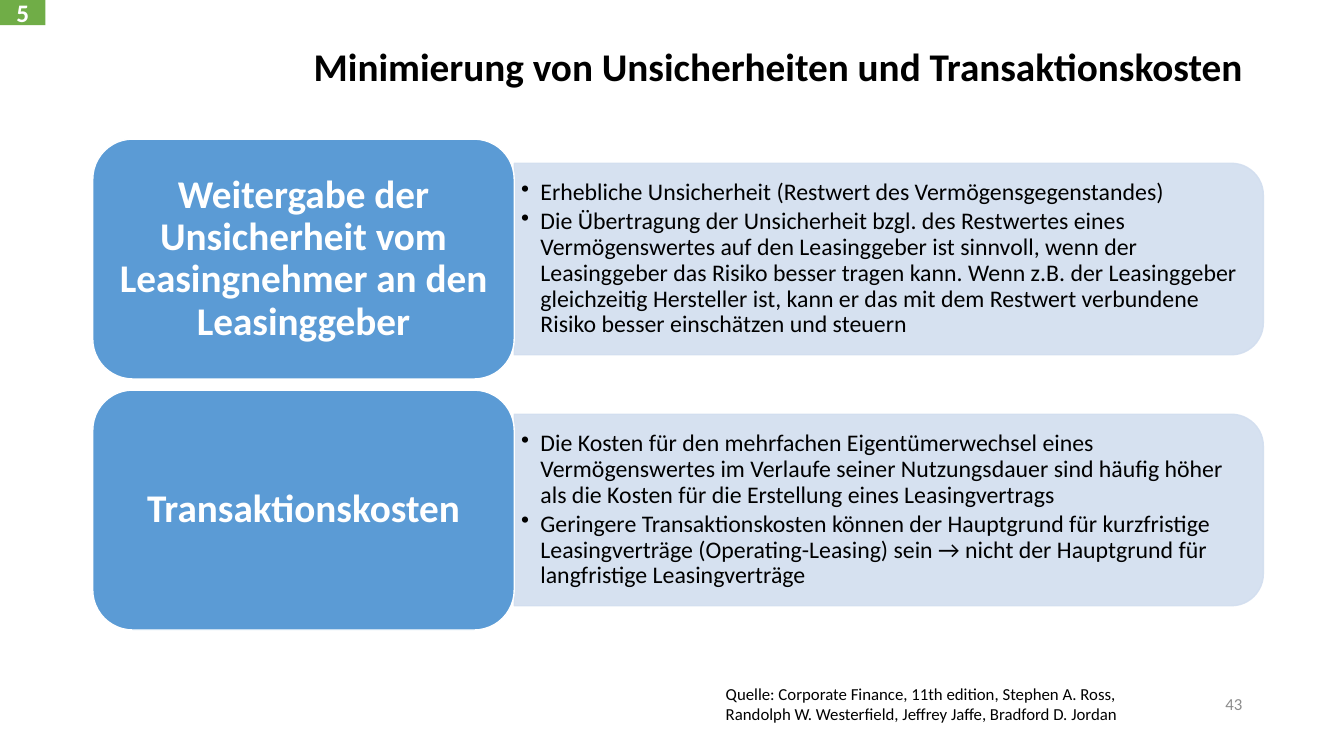
from lxml import etree
from pptx import Presentation
from pptx import util as u
from pptx.dml.color import RGBColor
from pptx.enum import shapes, text
from pptx.oxml import ns

TITLE = "Minimierung von Unsicherheiten und Transaktionskosten"
CHAPTER = "5"
PAGE = "43"
SOURCE = ("Quelle: Corporate Finance, 11th edition, Stephen A. Ross, "
          "Randolph W. Westerfield, Jeffrey Jaffe, Bradford D. Jordan")
TOPICS = [
    ("Weitergabe der Unsicherheit vom Leasingnehmer an den Leasinggeber", [
        "Erhebliche Unsicherheit (Restwert des Vermögensgegenstandes)",
        "Die Übertragung der Unsicherheit bzgl. des Restwertes eines "
        "Vermögenswertes auf den Leasinggeber ist sinnvoll, wenn der "
        "Leasinggeber das Risiko besser tragen kann. Wenn z.B. der "
        "Leasinggeber gleichzeitig Hersteller ist, kann er das mit dem "
        "Restwert verbundene Risiko besser einschätzen und steuern",
    ]),
    ("Transaktionskosten", [
        "Die Kosten für den mehrfachen Eigentümerwechsel eines "
        "Vermögenswertes im Verlaufe seiner Nutzungsdauer sind häufig höher "
        "als die Kosten für die Erstellung eines Leasingvertrags",
        "Geringere Transaktionskosten können der Hauptgrund für kurzfristige "
        "Leasingverträge (Operating-Leasing) sein → nicht der Hauptgrund für "
        "langfristige Leasingverträge",
    ]),
]

BLACK = RGBColor(0, 0, 0)
WHITE = RGBColor(255, 255, 255)
GREY = RGBColor(0x8C, 0x8C, 0x8C)
BLUE = RGBColor(0x5B, 0x9B, 0xD5)
PALE = RGBColor(0xD2, 0xDE, 0xEF)
GREEN = RGBColor(0x70, 0xAD, 0x47)

LEFT, TOP, PITCH = 0.92, 1.38, 2.49
HEAD_W, HEAD_H = 4.18, 2.38
BODY_W, BODY_H = 7.43, 1.9
TEXT_W, TEXT_H = 7.34, 1.72

ALIGN = text.PP_ALIGN
MIDDLE = text.MSO_ANCHOR.MIDDLE
PRESET = shapes.MSO_SHAPE


def inches(*values):
    return [u.Inches(v) for v in values]


def write(sp, lines, size, color, bold=False, align=ALIGN.LEFT, anchor=MIDDLE,
          inset=(0.1, 0.05), spacing=1.0, after=0, bullet=False):
    tf = sp.text_frame
    side, edge = inches(*inset)
    frame = dict(word_wrap=True, auto_size=text.MSO_AUTO_SIZE.NONE,
                 vertical_anchor=anchor, margin_left=side, margin_right=side,
                 margin_top=edge, margin_bottom=edge)
    for name, value in frame.items():
        setattr(tf, name, value)
    for i, line in enumerate(lines):
        p = tf.add_paragraph() if i else tf.paragraphs[0]
        if bullet:
            pPr = p._p.get_or_add_pPr()
            pPr.set("marL", str(u.Inches(0.19)))
            pPr.set("indent", str(-u.Inches(0.19)))
            etree.SubElement(pPr, ns.qn("a:buChar")).set("char", "•")
        for name, value in dict(alignment=align, line_spacing=spacing,
                                space_after=u.Pt(after)).items():
            setattr(p, name, value)
        r = p.add_run()
        r.text = line
        for name, value in dict(name="Calibri", size=u.Pt(size), bold=bold).items():
            setattr(r.font, name, value)
        r.font.color.rgb = color


def add_shape(s, preset, box, fill, line=None, alpha=None):
    sp = s.shapes.add_shape(preset, *inches(*box))
    sp.shadow.inherit = False
    sp.fill.solid()
    sp.fill.fore_color.rgb = fill
    if line is None:
        sp.line.fill.background()
    else:
        sp.line.color.rgb = line
        sp.line.width = u.Pt(1)
    if alpha:
        for clr in sp._element.spPr.iter(ns.qn("a:srgbClr")):
            etree.SubElement(clr, ns.qn("a:alpha")).set("val", str(alpha * 1000))
    return sp


def add_topic(s, top, heading, points):
    middle = top + HEAD_H / 2
    body_left = LEFT + HEAD_W
    panel = add_shape(s, PRESET.ROUND_2_SAME_RECTANGLE,
                      (body_left + (BODY_W - BODY_H) / 2, middle - BODY_W / 2,
                       BODY_H, BODY_W), PALE, PALE, alpha=90)
    panel.rotation = 90
    body = s.shapes.add_textbox(*inches(body_left, middle - TEXT_H / 2, TEXT_W, TEXT_H))
    write(body, points, 17, BLACK, inset=(0.07, 0.04), spacing=0.9, after=2.55,
          bullet=True)
    head = add_shape(s, PRESET.ROUNDED_RECTANGLE, (LEFT, top, HEAD_W, HEAD_H),
                     BLUE, WHITE)
    write(head, [heading], 28, WHITE, bold=True, align=ALIGN.CENTER,
          inset=(0.12, 0.06), spacing=0.9)


def main():
    prs = Presentation()
    prs.slide_width, prs.slide_height = inches(13.33, 7.5)
    s = prs.slides.add_slide(prs.slide_layouts[5])

    title = s.shapes.title
    title.left, title.top, title.width, title.height = inches(LEFT, 0.4, 11.5, 0.57)
    write(title, [TITLE], 28, BLACK, bold=True, align=ALIGN.RIGHT, spacing=0.9)

    for i, (heading, points) in enumerate(TOPICS):
        add_topic(s, TOP + i * PITCH, heading, points)

    chapter = add_shape(s, PRESET.RECTANGLE, (0, 0, 0.45, 0.25), GREEN)
    write(chapter, [CHAPTER], 18, WHITE, bold=True, align=ALIGN.CENTER)

    page = s.shapes.add_textbox(*inches(9.42, 6.78, 3, 0.4))
    write(page, [PAGE], 12, GREY, align=ALIGN.RIGHT)
    source = s.shapes.add_textbox(*inches(7.1, 6.73, 4.36, 0.5))
    write(source, [SOURCE], 12, BLACK, anchor=text.MSO_ANCHOR.TOP)

    prs.save("out.pptx")


if __name__ == "__main__":
    main()
